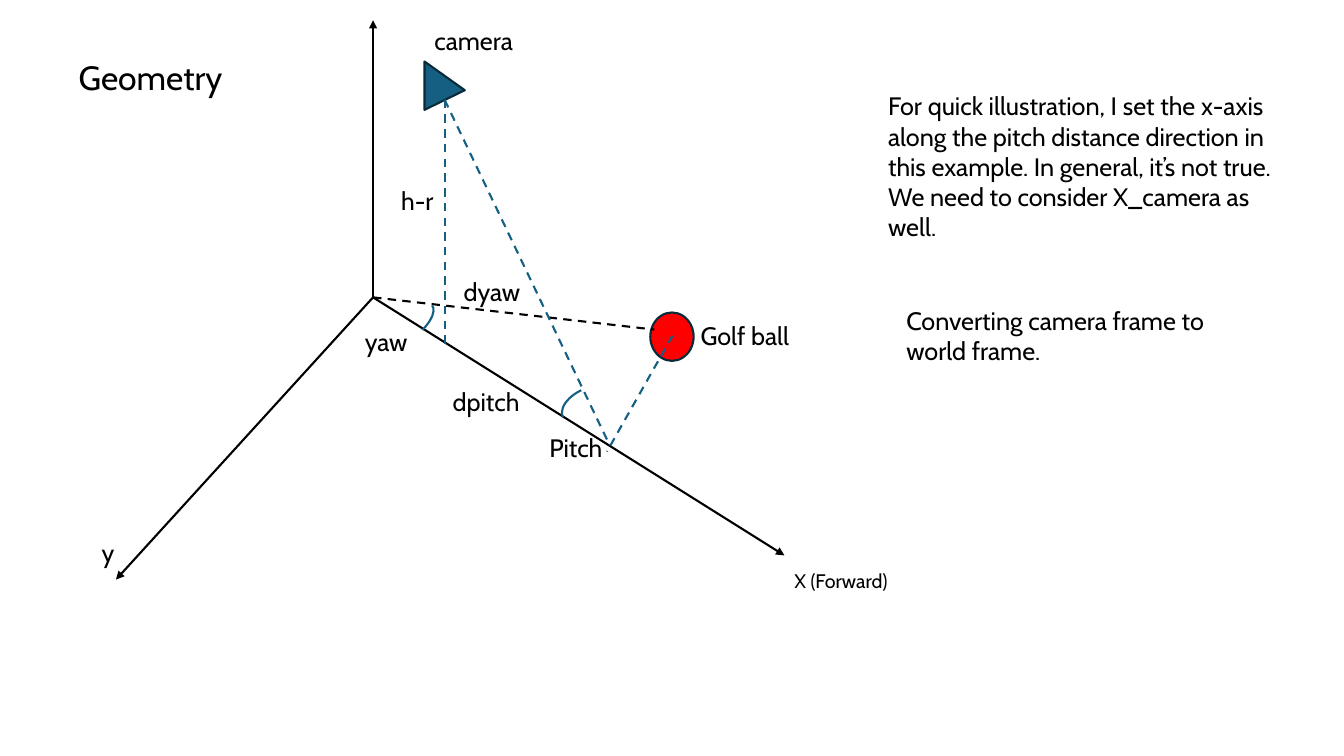
from dataclasses import dataclass
from typing import Optional

from lxml.etree import SubElement
from pptx import Presentation
from pptx.dml.color import RGBColor
from pptx.enum.dml import MSO_LINE
from pptx.enum.shapes import MSO_CONNECTOR, MSO_SHAPE
from pptx.enum.text import MSO_ANCHOR, MSO_AUTO_SIZE, PP_ALIGN
from pptx.oxml.ns import qn
from pptx.shapes.base import BaseShape
from pptx.slide import Slide
from pptx.util import Inches, Pt

Point = tuple[float, float]
Box = tuple[float, float, float, float]


@dataclass(frozen=True)
class Theme:
    font: str = "Cabin"
    ink: str = "000000"
    accent: str = "156082"
    outline: str = "092A39"
    ball: str = "FF0000"
    title_size: int = 24
    body_size: int = 18
    small_size: int = 14
    line_width: float = 1.5


THEME = Theme()


@dataclass(frozen=True)
class Segment:
    start: Point
    end: Point
    color: str = THEME.ink
    dashed: bool = False
    arrow: bool = False


@dataclass(frozen=True)
class Figure:
    kind: MSO_SHAPE
    box: Box
    line: str
    fill: Optional[str] = None
    rotation: float = 0
    adjustment: Optional[float] = None


@dataclass(frozen=True)
class Label:
    text: str
    box: Box
    size: int = THEME.body_size


ORIGIN = (3.7, 2.95)
CAMERA = (4.41, 0.99)
BALL = (6.67, 3.33)

SEGMENTS = [
    Segment(ORIGIN, (7.78, 5.51), arrow=True),
    Segment(ORIGIN, (1.15, 5.75), arrow=True),
    Segment(ORIGIN, (3.7, 0.2), arrow=True),
    Segment(ORIGIN, (6.49, 3.27), dashed=True),
    Segment(CAMERA, (4.41, 3.44), THEME.accent, dashed=True),
    Segment(BALL, (6.02, 4.48), THEME.accent, dashed=True),
    Segment(CAMERA, (6.02, 4.36), THEME.accent, dashed=True),
]

BALL_FIGURE = Figure(MSO_SHAPE.OVAL, (6.45, 3.1, 0.43, 0.48), THEME.outline, THEME.ball)
CAMERA_FIGURE = Figure(MSO_SHAPE.ISOSCELES_TRIANGLE, (4.17, 0.65, 0.48, 0.4),
                       THEME.outline, THEME.accent, 90, 0.594)
PITCH_ARC = Figure(MSO_SHAPE.ARC, (5.67, 3.74, 0.33, 0.56), THEME.accent, rotation=244.8)
YAW_ARC = Figure(MSO_SHAPE.ARC, (4.01, 2.96, 0.21, 0.48), THEME.accent, rotation=45.2)

LABELS = [
    Label("X (Forward)", (7.78, 5.59, 1.55, 0.34), THEME.small_size),
    Label("y", (0.91, 5.28, 0.48, 0.4)),
    Label("Golf ball", (6.85, 3.13, 1.87, 0.4)),
    Label("camera", (4.21, 0.2, 1.53, 0.4)),
    Label("Pitch", (5.35, 4.24, 0.81, 0.4)),
    Label("dpitch", (4.39, 3.78, 1.22, 0.4)),
    Label("yaw", (3.52, 3.19, 0.71, 0.4)),
    Label("dyaw", (4.5, 2.69, 1.5, 0.4)),
    Label("h-r", (3.88, 1.79, 0.88, 0.4)),
    Label("For quick illustration, I set the x-axis along the pitch distance "
          "direction in this example. In general, it’s not true. "
          "We need to consider X_camera as well.", (8.71, 0.85, 4.13, 1.62)),
    Label("Converting camera frame to world frame.", (8.89, 2.98, 3.29, 0.71)),
]


def write_text(shape: BaseShape, text: str, *, size: int = THEME.body_size,
               color: str = THEME.ink) -> None:
    frame = shape.text_frame
    frame.text = text
    frame.word_wrap = True
    frame.auto_size = MSO_AUTO_SIZE.SHAPE_TO_FIT_TEXT
    frame.vertical_anchor = MSO_ANCHOR.TOP
    paragraph = frame.paragraphs[0]
    paragraph.alignment = PP_ALIGN.LEFT
    paragraph.font.name = THEME.font
    paragraph.font.size = Pt(size)
    paragraph.font.color.rgb = RGBColor.from_string(color)


def add_title(slide: Slide, text: str, box: Box) -> None:
    title = slide.shapes.title
    title.left, title.top, title.width, title.height = map(Inches, box)
    write_text(title, text, size=THEME.title_size)


def add_label(slide: Slide, label: Label) -> None:
    write_text(slide.shapes.add_textbox(*map(Inches, label.box)), label.text, size=label.size)


def add_segment(slide: Slide, segment: Segment) -> None:
    connector = slide.shapes.add_connector(
        MSO_CONNECTOR.STRAIGHT, *map(Inches, segment.start + segment.end))
    connector.line.color.rgb = RGBColor.from_string(segment.color)
    connector.line.width = Pt(THEME.line_width)
    if segment.dashed:
        connector.line.dash_style = MSO_LINE.DASH
    if segment.arrow:
        SubElement(connector.line._get_or_add_ln(), qn("a:tailEnd"), type="triangle")
    SubElement(connector._element.spPr, qn("a:effectLst"))


def add_figure(slide: Slide, figure: Figure) -> None:
    shape = slide.shapes.add_shape(figure.kind, *map(Inches, figure.box))
    shape.shadow.inherit = False
    shape.rotation = figure.rotation
    if figure.adjustment is not None:
        shape.adjustments[0] = figure.adjustment
    if figure.fill:
        shape.fill.solid()
        shape.fill.fore_color.rgb = RGBColor.from_string(figure.fill)
    else:
        shape.fill.background()
    shape.line.color.rgb = RGBColor.from_string(figure.line)
    shape.line.width = Pt(THEME.line_width)


def main() -> None:
    presentation = Presentation()
    presentation.slide_width = Inches(13.33)
    presentation.slide_height = Inches(7.5)
    slide = presentation.slides.add_slide(presentation.slide_layouts[5])
    add_title(slide, "Geometry", (0.68, 0.51, 2.8, 0.5))
    add_figure(slide, BALL_FIGURE)
    add_figure(slide, CAMERA_FIGURE)
    for segment in SEGMENTS:
        add_segment(slide, segment)
    for arc in (PITCH_ARC, YAW_ARC):
        add_figure(slide, arc)
    for label in LABELS:
        add_label(slide, label)
    presentation.save("out.pptx")


if __name__ == "__main__":
    main()
